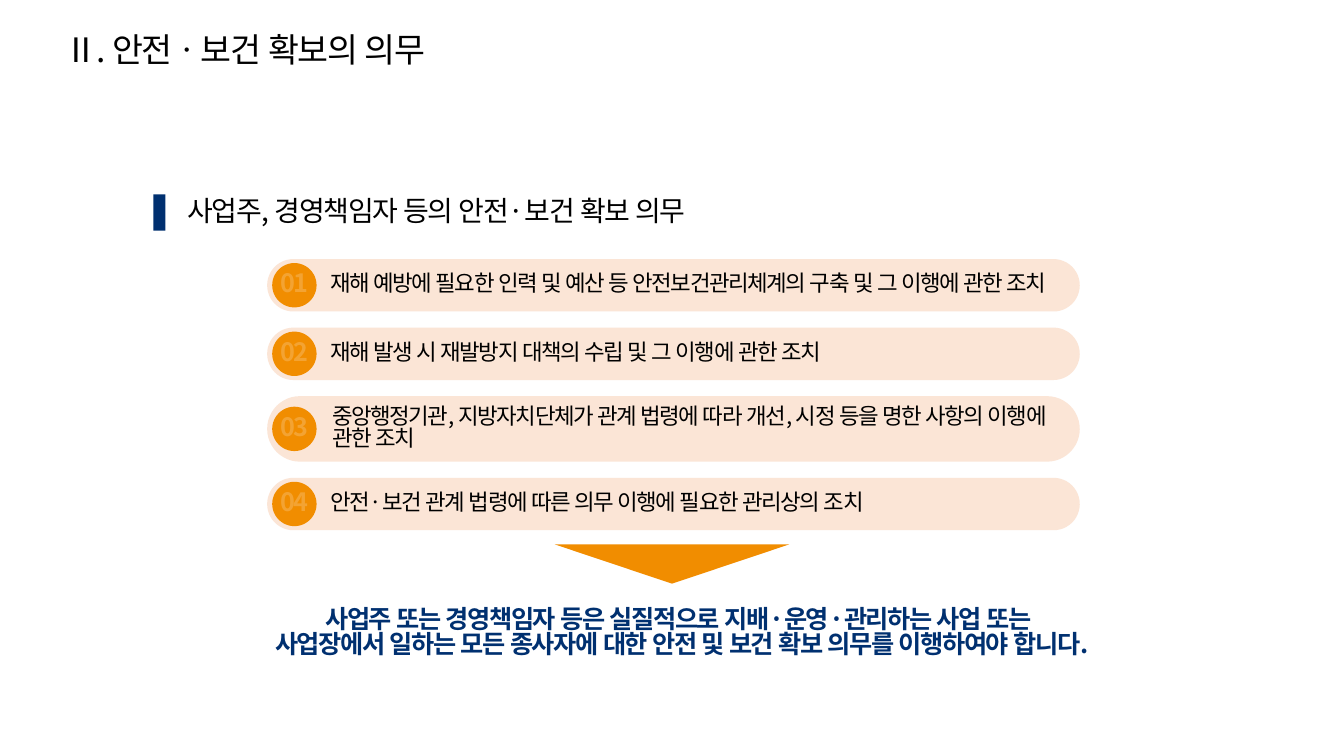
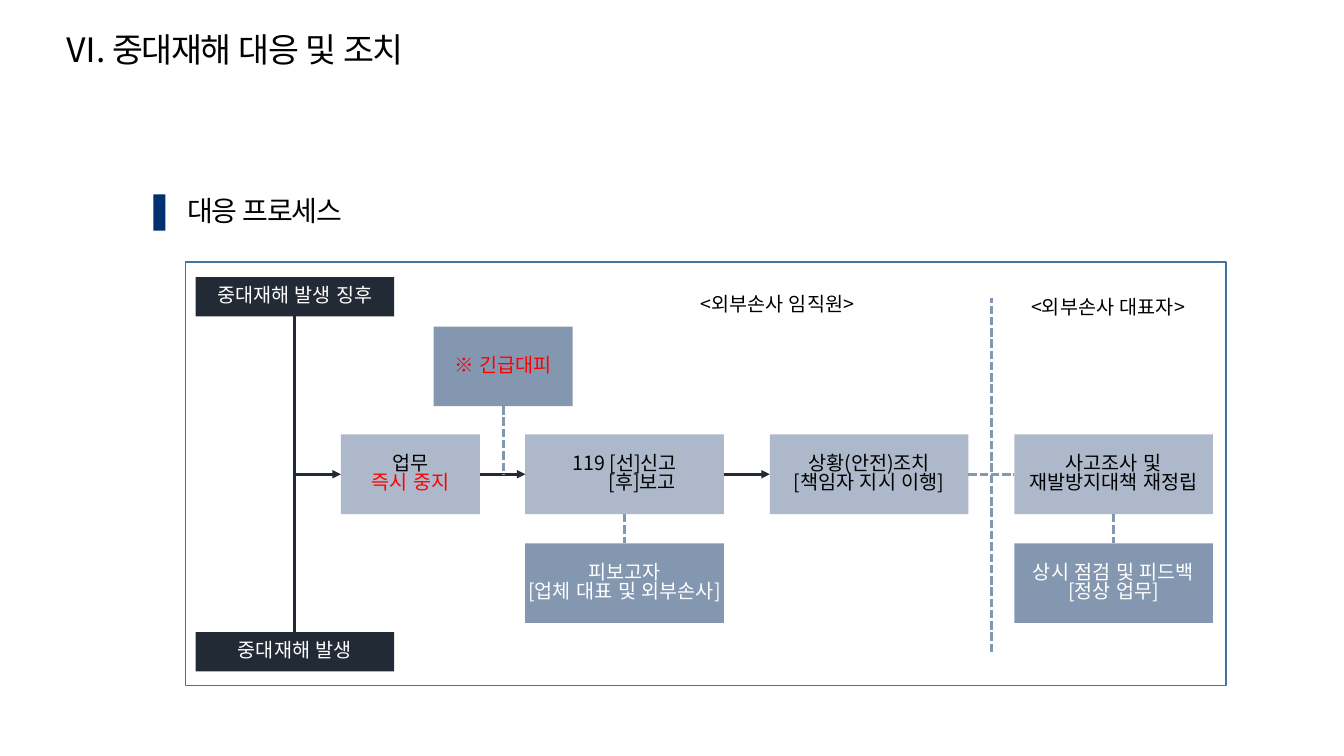
from dataclasses import dataclass

from pptx import Presentation
from pptx import util as u
from pptx.dml.color import RGBColor
from pptx.enum import dml, lang, shapes, text
from pptx.oxml import ns
from lxml import etree

FONT = "Noto Sans CJK KR"
LINE_SPACING = 0.83
SPACED = -100
TOP, LEFT, BOTTOM, RIGHT = range(4)
RECT = shapes.MSO_SHAPE.RECTANGLE
COLORS = {
    "black": "000000",
    "white": "FFFFFF",
    "red": "FF0000",
    "navy": "003070",
    "orange": "F18D00",
    "peach": "FBE5D6",
    "ink": "222A35",
    "mist": "ADB9CA",
    "steel": "8497B0",
    "frame": "43739E",
    "gray": "808080",
}


@dataclass(frozen=True)
class Line:
    words: str
    color: str = ""
    indent: float = 0


@dataclass(frozen=True)
class Duty:
    number: str
    words: str
    height: float = 0.52


@dataclass(frozen=True)
class Step:
    key: str
    left: float
    top: float
    width: float
    height: float
    fill: str
    color: str
    lines: tuple[Line, ...]
    inset: float | None = None


@dataclass(frozen=True)
class Link:
    start: str
    start_site: int
    end: str
    end_site: int
    arrow: bool = False


DUTIES = (
    Duty("01", "재해 예방에 필요한 인력 및 예산 등 안전보건관리체계의 구축 및 그 이행에 관한 조치"),
    Duty("02", "재해 발생 시 재발방지 대책의 수립 및 그 이행에 관한 조치"),
    Duty("03", "중앙행정기관, 지방자치단체가 관계 법령에 따라 개선, 시정 등을 명한 사항의 이행에 관한 조치", 0.65),
    Duty("04", "안전·보건 관계 법령에 따른 의무 이행에 필요한 관리상의 조치"),
)

FLOW_TOP, FOLLOW_TOP = 4.31, 5.39
WIDE, NARROW, TALL, LOW = 1.97, 1.38, 0.79, 0.39
FLOW_MIDDLE = FLOW_TOP + TALL / 2
REPORT_X, ACTION_X, REVIEW_X = (5.21 + 2.425 * column for column in range(3))
EVENT_X, STOP_X, ESCAPE_X = 1.94, 3.38, 4.3

STEPS = (
    Step("sign", EVENT_X, 2.75, WIDE, LOW, "ink", "white", (Line("중대재해 발생 징후"),)),
    Step("accident", EVENT_X, 6.27, WIDE, LOW, "ink", "white", (Line("중대재해 발생"),)),
    Step("stop", STOP_X, FLOW_TOP, NARROW, TALL, "mist", "black",
         (Line("업무"), Line("즉시 중지", "red"))),
    Step("report", REPORT_X, FLOW_TOP, WIDE, TALL, "mist", "black",
         (Line("119 [선]신고"), Line("[후]보고", indent=0.35))),
    Step("action", ACTION_X, FLOW_TOP, WIDE, TALL, "mist", "black",
         (Line("상황(안전)조치"), Line("[책임자 지시 이행]"))),
    Step("review", REVIEW_X, FLOW_TOP, WIDE, TALL, "mist", "black",
         (Line("사고조사 및 재발방지대책 재정립"),)),
    Step("feedback", REVIEW_X, FOLLOW_TOP, WIDE, TALL, "steel", "white",
         (Line("상시 점검 및 피드백"), Line("[정상 업무]"))),
    Step("escape", ESCAPE_X, 3.24, NARROW, TALL, "steel", "red", (Line("※ 긴급대피"),)),
    Step("receiver", REPORT_X, FOLLOW_TOP, WIDE, TALL, "steel", "white",
         (Line("피보고자"), Line("[업체 대표 및 외부손사]")), inset=0),
)

LINKS = (
    Link("stop", RIGHT, "report", LEFT, arrow=True),
    Link("report", RIGHT, "action", LEFT, arrow=True),
    Link("report", BOTTOM, "receiver", TOP),
    Link("review", BOTTOM, "feedback", TOP),
    Link("action", RIGHT, "review", LEFT),
)


def rgb(color: str) -> RGBColor:
    return RGBColor.from_string(COLORS[color])


def write(shape, *lines: Line, size: float, color: str = "black", bold: bool = False,
          align=text.PP_ALIGN.LEFT, spacing: int = 0, outline: str = "",
          opacity: int = 100, insets: tuple[float, ...] = (0.1, 0.05, 0.1, 0.05)) -> None:
    frame = shape.text_frame
    frame.word_wrap = True
    frame.auto_size = text.MSO_AUTO_SIZE.NONE
    frame.vertical_anchor = text.MSO_ANCHOR.MIDDLE
    frame.margin_left, frame.margin_top, frame.margin_right, frame.margin_bottom = map(u.Inches, insets)
    for index, line in enumerate(lines):
        paragraph = frame.add_paragraph() if index else frame.paragraphs[0]
        paragraph.alignment = align
        paragraph.line_spacing = LINE_SPACING
        paragraph.space_before = u.Pt(0)
        if line.indent:
            paragraph._p.get_or_add_pPr().set("marL", str(u.Inches(line.indent)))
        run = paragraph.add_run()
        run.text = line.words
        font = run.font
        font.size, font.bold, font.name = u.Pt(size), bold, FONT
        font.language_id = lang.MSO_LANGUAGE_ID.KOREAN
        font.color.rgb = rgb(line.color or color)
        properties = run._r.get_or_add_rPr()
        etree.SubElement(properties, ns.qn("a:ea"), typeface=FONT)
        if spacing:
            properties.set("spc", str(spacing))
        if opacity < 100:
            fill_color = properties.find(ns.qn("a:solidFill"))[0]
            etree.SubElement(fill_color, ns.qn("a:alpha"), val=str(opacity * 1000))
        if outline:
            edge = etree.Element(ns.qn("a:ln"), w=str(u.Pt(0.75)))
            solid = etree.SubElement(edge, ns.qn("a:solidFill"))
            edge_color = etree.SubElement(solid, ns.qn("a:srgbClr"), val=COLORS[outline])
            etree.SubElement(edge_color, ns.qn("a:alpha"), val="20000")
            properties.insert(0, edge)


def add_block(slide, kind, left: float, top: float, width: float, height: float,
              fill: str = "", border: str = ""):
    block = slide.shapes.add_shape(kind, *map(u.Inches, (left, top, width, height)))
    block.shadow.inherit = False
    if fill:
        block.fill.solid()
        block.fill.fore_color.rgb = rgb(fill)
    else:
        block.fill.background()
    if border:
        block.line.color.rgb = rgb(border)
        block.line.width = u.Pt(1)
    else:
        block.line.fill.background()
    return block


def add_label(slide, left: float, top: float, width: float, height: float, words: str, **style):
    label = slide.shapes.add_textbox(*map(u.Inches, (left, top, width, height)))
    write(label, Line(words), **style)


def add_line(slide, x1: float, y1: float, x2: float, y2: float, color: str = "steel",
             dashed: bool = True, arrow: bool = False):
    connector = slide.shapes.add_connector(
        shapes.MSO_CONNECTOR.STRAIGHT, *map(u.Inches, (x1, y1, x2, y2)))
    connector.line.color.rgb = rgb(color)
    connector.line.width = u.Pt(2)
    if dashed:
        connector.line.dash_style = dml.MSO_LINE.SQUARE_DOT
    if arrow:
        etree.SubElement(connector.line._get_or_add_ln(), ns.qn("a:tailEnd"), type="triangle")
    etree.SubElement(connector._element.spPr, ns.qn("a:effectLst"))
    return connector


def add_slide(deck, title: str, heading: str):
    slide = deck.slides.add_slide(deck.slide_layouts[5])
    headline = slide.shapes.title
    headline.left, headline.top, headline.width, headline.height = map(u.Inches, (0.54, 0.19, 5.3, 0.67))
    write(headline, Line(title), size=24, spacing=SPACED, outline="orange")
    add_block(slide, RECT, 1.52, 1.93, 0.12, 0.36, "navy")
    add_label(slide, 1.76, 1.89, 5.44, 0.44, heading, size=20, spacing=SPACED, outline="gray")
    return slide


def add_duties(slide) -> None:
    left, top, gap, badge = 2.65, 2.57, 0.16, 0.44
    for duty in DUTIES:
        pill = add_block(slide, shapes.MSO_SHAPE.ROUNDED_RECTANGLE, left, top, 8.06, duty.height, "peach")
        pill.adjustments[0] = 0.5
        write(pill, Line(duty.words), size=16, spacing=SPACED, outline="gray",
              insets=(0.55, 0.05, 0.1, 0.05))
        circle = add_block(slide, shapes.MSO_SHAPE.OVAL, left + 0.05,
                           top + (duty.height - badge) / 2, badge, badge, "orange")
        write(circle, Line(duty.number), size=18, color="white", bold=True, spacing=SPACED,
              align=text.PP_ALIGN.CENTER, outline="white", opacity=20, insets=(0, 0, 0, 0))
        top += duty.height + gap


def build_duty_slide(deck) -> None:
    slide = add_slide(deck, "Ⅱ. 안전ㆍ보건 확보의 의무", "사업주, 경영책임자 등의 안전·보건 확보 의무")
    add_duties(slide)
    pointer = add_block(slide, shapes.MSO_SHAPE.ISOSCELES_TRIANGLE, 5.5, 5.4, 2.33, 0.39, "orange")
    pointer.rotation = 180
    add_label(slide, 2.6, 5.93, 8.24, 0.71,
              "사업주 또는 경영책임자 등은 실질적으로 지배·운영·관리하는 사업 또는 "
              "사업장에서 일하는 모든 종사자에 대한 안전 및 보건 확보 의무를 이행하여야 합니다.",
              size=18, color="navy", bold=True, align=text.PP_ALIGN.CENTER,
              spacing=SPACED, outline="gray")


def build_process_slide(deck) -> None:
    slide = add_slide(deck, "Ⅵ. 중대재해 대응 및 조치", "대응 프로세스")
    add_block(slide, RECT, 1.84, 2.6, 10.32, 4.2, border="frame")
    boxes = {}
    for step in STEPS:
        box = add_block(slide, RECT, step.left, step.top, step.width, step.height, step.fill)
        insets = (0.1, 0.05, 0.1, 0.05) if step.inset is None else (step.inset,) * 4
        write(box, *step.lines, size=14, color=step.color, align=text.PP_ALIGN.CENTER, insets=insets)
        boxes[step.key] = box

    for link in LINKS:
        connector = add_line(slide, 0, 0, 0, 0, color="ink" if link.arrow else "steel",
                             dashed=not link.arrow, arrow=link.arrow)
        connector.begin_connect(boxes[link.start], link.start_site)
        connector.end_connect(boxes[link.end], link.end_site)

    event_middle = EVENT_X + WIDE / 2
    escape_middle = ESCAPE_X + NARROW / 2
    add_line(slide, event_middle, 3.14, event_middle, 6.27, color="ink", dashed=False)
    add_line(slide, event_middle, FLOW_MIDDLE, STOP_X, FLOW_MIDDLE, color="ink", dashed=False, arrow=True)
    add_line(slide, escape_middle, 4.03, escape_middle, FLOW_MIDDLE)
    add_line(slide, 9.83, 6.47, 9.83, 2.96)
    for left, top, role in ((6.66, 2.84, "<외부손사 임직원>"), (9.94, 2.87, "<외부손사 대표자>")):
        add_label(slide, left, top, 2.1, LOW, role, size=14, align=text.PP_ALIGN.CENTER)


def main() -> None:
    deck = Presentation()
    deck.slide_width, deck.slide_height = u.Inches(13.33), u.Inches(7.5)
    build_duty_slide(deck)
    build_process_slide(deck)
    deck.save("out.pptx")


if __name__ == "__main__":
    main()
